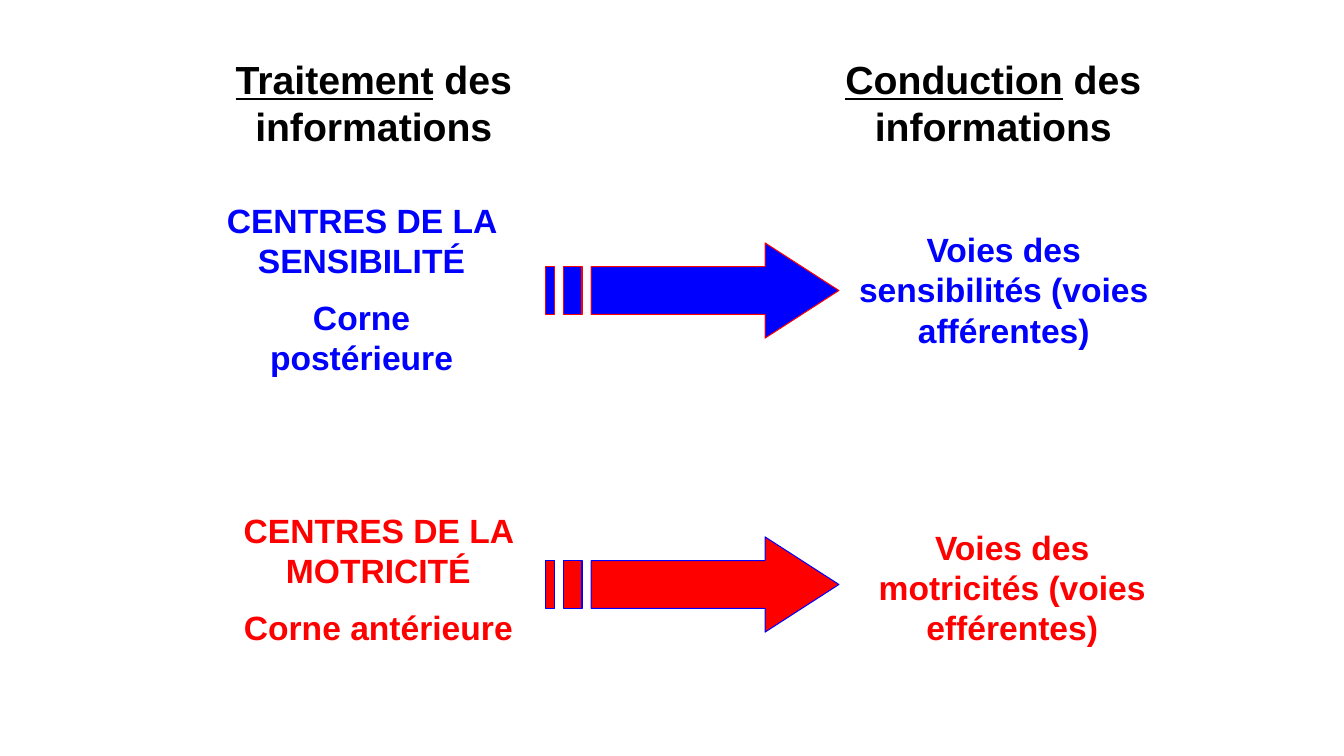
from pptx import Presentation
from pptx import util as u
from pptx.dml import color
from pptx.enum import text

Pt = u.Pt
BLACK, BLUE, RED = "000000", "0000FF", "FF0000"


def rgb(value):
    return color.RGBColor.from_string(value)


deck = Presentation()
deck.slide_width, deck.slide_height = Pt(960), Pt(540)
page = deck.slides.add_slide(deck.slide_layouts[6])

# Each label: left, top, width, height, size, colour, paragraphs of (words, underlined)
labels = [
    (587.5, 36, 244, 74, 28, BLACK,
     [[("Conduction", True), (" des informations", False)]]),
    (126, 36, 282, 74, 28, BLACK,
     [[("Traitement", True), (" des informations", False)]]),
    (594, 160, 246, 94, 24, BLUE,
     [[("Voies des sensibilités (voies afférentes)", False)]]),
    (606, 372.5, 234, 94, 24, RED,
     [[("Voies des motricités (voies efférentes)", False)]]),
    (150, 139, 216.5, 138, 24, BLUE,
     [[("CENTRES DE LA SENSIBILITÉ", False)], [("Corne postérieure", False)]]),
    (162, 360.5, 216.5, 109, 24, RED,
     [[("CENTRES DE LA MOTRICITÉ", False)], [("Corne antérieure", False)]]),
]
for left, top, width, height, size, ink, paragraphs in labels:
    box = page.shapes.add_textbox(Pt(left), Pt(top), Pt(width), Pt(height))
    frame = box.text_frame
    frame.word_wrap = True
    frame.auto_size = text.MSO_AUTO_SIZE.SHAPE_TO_FIT_TEXT
    for index, spans in enumerate(paragraphs):
        para = frame.add_paragraph() if index else frame.paragraphs[0]
        para.alignment = text.PP_ALIGN.CENTER
        para.space_before = Pt(size / 2 if index else 0)
        for words, underlined in spans:
            span = para.add_run()
            span.text = words
            look = {"name": "Arial", "size": Pt(size), "bold": True,
                    "underline": underlined}
            for name, value in look.items():
                setattr(span.font, name, value)
            span.font.color.rgb = rgb(ink)

# Arrow outline, measured from its top left corner
shaft_top, shaft_bottom, arrow_height = 17, 51, 68
shaft_left, head_left, tip = 32.75, 157, 209.75
head = [(head_left, 0), (head_left, shaft_top), (shaft_left, shaft_top),
        (shaft_left, shaft_bottom), (head_left, shaft_bottom),
        (head_left, arrow_height), (tip, arrow_height / 2)]
stripes = [[(start, shaft_top), (start, shaft_bottom), (end, shaft_bottom), (end, shaft_top)]
           for start, end in ((13.25, 26.25), (0, 6.5))]

for top, fill, edge in ((173.5, BLUE, RED), (383.5, RED, BLUE)):
    outline = page.shapes.build_freeform(Pt(head[0][0]), Pt(head[0][1]))
    for index, contour in enumerate([head, *stripes]):
        points = [(Pt(x), Pt(y)) for x, y in contour]
        if index:
            outline.move_to(*points[0])
        outline.add_line_segments(points[1:], close=True)
    arrow = outline.convert_to_shape(Pt(389.5), Pt(top))
    arrow.shadow.inherit = False
    arrow.fill.solid()
    arrow.fill.fore_color.rgb = rgb(fill)
    arrow.line.color.rgb = rgb(edge)
    arrow.line.width = Pt(0.75)

deck.save("out.pptx")
